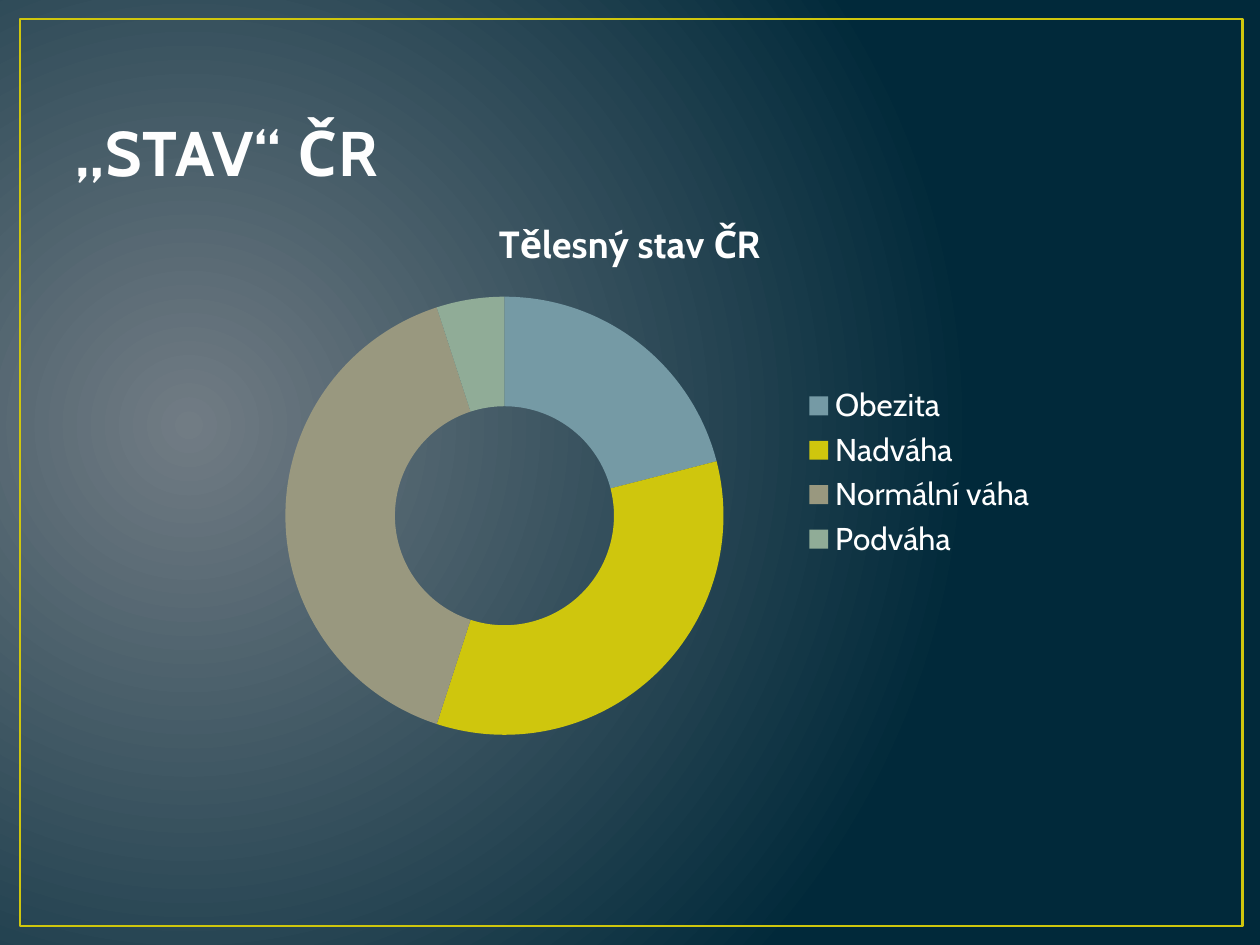
"""Build a slide with a doughnut chart of body weight in the Czech Republic."""
from lxml import etree
from pptx import Presentation
from pptx import util as u
from pptx.chart import data
from pptx.dml.color import RGBColor
from pptx.enum import chart as ch, shapes, text
from pptx.oxml import ns

COLORS = {"glow": "717C84", "navy": "01293A", "frame": "CFC60D",
          "title": "FEFEFE", "outline": "384F55", "label": "FFFFFF"}
GROUPS = {"Obezita": (21, "759AA5"), "Nadváha": (34, "CFC60D"),
          "Normální váha": (40, "99987F"), "Podváha": (5, "90AC97")}
CHART_TITLE = "Tělesný stav ČR"


def box(left, top, width, height):
    return (int(W * left), int(H * top), int(W * width), int(H * height))


def style(font, size, color, bold=False):
    for key, value in {"name": "Cabin", "size": u.Pt(size), "bold": bold}.items():
        setattr(font, key, value)
    font.color.rgb = RGBColor.from_string(COLORS[color])


prs = Presentation()
prs.slide_width, prs.slide_height = W, H = u.Inches(10), u.Inches(7.5)
s = prs.slides.add_slide(prs.slide_layouts[6])

fill = s.background.fill
fill.gradient()
for stop, name, position in zip(fill.gradient_stops, ("glow", "navy"), (0, 1)):
    stop.color.rgb = RGBColor.from_string(COLORS[name])
    stop.position = position
grad = s.background._cSld.find(".//" + ns.qn("a:gradFill"))
grad.remove(grad.find(ns.qn("a:lin")))
circle = etree.SubElement(grad, ns.qn("a:path"), {"path": "circle"})
center = {"l": "15000", "t": "50000", "r": "85000", "b": "60000"}
etree.SubElement(circle, ns.qn("a:fillToRect"), center)

sp = s.shapes.add_shape(shapes.MSO_SHAPE.RECTANGLE, *box(0.016, 0.02, 0.97, 0.96))
sp.shadow.inherit = False
sp.fill.background()
sp.line.color.rgb = RGBColor.from_string(COLORS["frame"])
sp.line.width = u.Pt(1.5)

tf = s.shapes.add_textbox(*box(0.05, 0.04, 0.9, 1 / 6)).text_frame
tf.word_wrap = True
tf.vertical_anchor = text.MSO_ANCHOR.BOTTOM
r = tf.paragraphs[0].add_run()
r.text = "„STAV“ ČR"
style(r.font, 36, "title", True)
rpr = r.font._element
rpr.set("spc", "50")
ln = etree.Element(ns.qn("a:ln"), {"w": str(u.Pt(1.05))})
solid = etree.SubElement(ln, ns.qn("a:solidFill"))
etree.SubElement(solid, ns.qn("a:srgbClr"), {"val": COLORS["outline"]})
rpr.insert(0, ln)

cd = data.CategoryChartData()
cd.categories = list(GROUPS)
cd.add_series(CHART_TITLE, [value for value, color in GROUPS.values()])
chart = s.shapes.add_chart(ch.XL_CHART_TYPE.DOUGHNUT,
                           *box(1 / 6, 0.204, 2 / 3, 0.592), cd).chart
style(chart.font, 18, "label")
chart.has_title = True
tf = chart.chart_title.text_frame
tf.text = CHART_TITLE
style(tf.paragraphs[0].runs[0].font, 21.6, "label", True)
chart.has_legend = True
chart.legend.position = ch.XL_LEGEND_POSITION.RIGHT
chart.legend.include_in_layout = False
style(chart.legend.font, 18, "label")

plot = chart.plots[0]
plot.vary_by_categories = True
plot._element.find(ns.qn("c:holeSize")).set("val", "50")
for i, (value, color) in enumerate(GROUPS.values()):
    point = plot.series[0].points[i].format
    point.fill.solid()
    point.fill.fore_color.rgb = RGBColor.from_string(color)
    point.line.fill.background()

prs.save("out.pptx")
